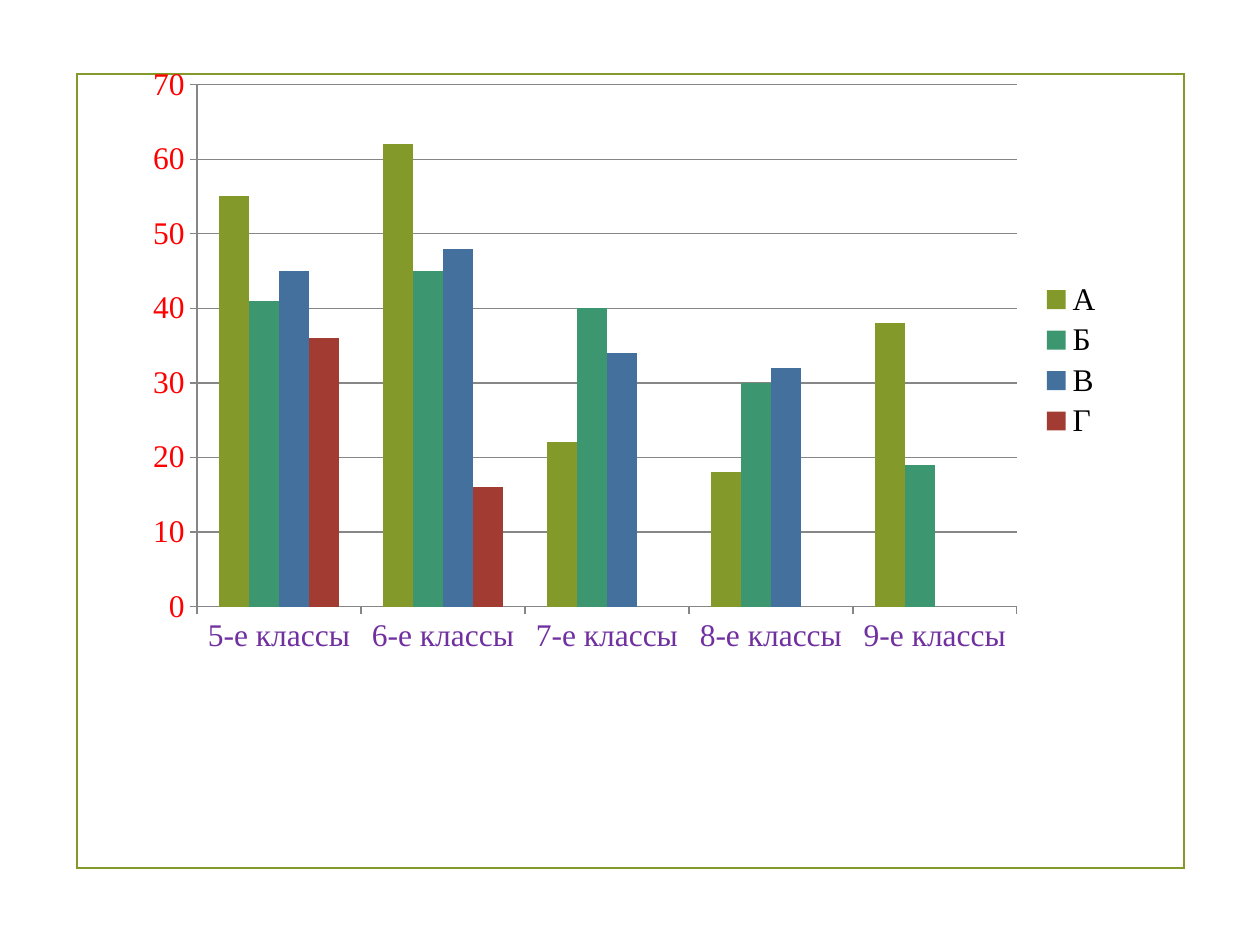
from dataclasses import dataclass

from lxml.etree import SubElement
from pptx import Presentation
from pptx.chart.data import CategoryChartData
from pptx.dml.color import RGBColor
from pptx.enum.chart import XL_CHART_TYPE as ChartType
from pptx.enum.chart import XL_LEGEND_POSITION as LegendPosition
from pptx.enum.chart import XL_TICK_MARK as TickMark
from pptx.enum.shapes import MSO_SHAPE as Shape
from pptx.oxml.ns import qn
from pptx.util import Inches, Pt

OLIVE = RGBColor(0x83, 0x99, 0x2A)
GREEN = RGBColor(0x3C, 0x97, 0x70)
BLUE = RGBColor(0x44, 0x70, 0x9D)
BRICK = RGBColor(0xA2, 0x3C, 0x33)
PURPLE = RGBColor(0x70, 0x30, 0xA0)
RED = RGBColor(0xFF, 0x00, 0x00)
BLACK = RGBColor(0x00, 0x00, 0x00)
GRAY = RGBColor(0x86, 0x86, 0x86)
FONT = "Times New Roman"


@dataclass(frozen=True)
class ClassLetter:
    name: str
    values: tuple
    color: RGBColor


GRADES = [f"{grade}-е классы" for grade in range(5, 10)]
LETTERS = [
    ClassLetter("А", (55, 62, 22, 18, 38), OLIVE),
    ClassLetter("Б", (41, 45, 40, 30, 19), GREEN),
    ClassLetter("В", (45, 48, 34, 32, None), BLUE),
    ClassLetter("Г", (36, 16, None, None, None), BRICK),
]


def format_text(text, *, color: RGBColor, size: float = 18) -> None:
    text.font.name = FONT
    text.font.size = Pt(size)
    text.font.color.rgb = color


def format_line(line, *, color: RGBColor, width: float) -> None:
    line.color.rgb = color
    line.width = Pt(width)


def format_axis(axis, *, color: RGBColor) -> None:
    axis.major_tick_mark = TickMark.OUTSIDE
    axis.minor_tick_mark = TickMark.NONE
    format_line(axis.format.line, color=GRAY, width=0.75)
    format_text(axis.tick_labels, color=color)


def draw_frame(page) -> None:
    frame = page.shapes.add_shape(
        Shape.RECTANGLE, Inches(0.61), Inches(0.59), Inches(8.79), Inches(6.3)
    )
    frame.shadow.inherit = False
    frame.fill.background()
    format_line(frame.line, color=OLIVE, width=1.25)
    outline = frame.element.spPr.find(qn("a:ln"))
    SubElement(outline, qn("a:miter"), lim="800000")


def draw_chart(page, letters: list[ClassLetter]) -> None:
    data = CategoryChartData()
    data.categories = GRADES
    for letter in letters:
        data.add_series(letter.name, letter.values)
    chart = page.shapes.add_chart(
        ChartType.COLUMN_CLUSTERED,
        Inches(1.06), Inches(0.44), Inches(7.8), Inches(4.84), data,
    ).chart
    chart.has_title = False
    format_text(chart, color=BLACK)

    plot = chart.plots[0]
    plot.gap_width = 150
    plot.overlap = 0
    plot.vary_by_categories = False
    for series, letter in zip(plot.series, letters):
        series.format.fill.solid()
        series.format.fill.fore_color.rgb = letter.color
        series.invert_if_negative = False

    format_axis(chart.category_axis, color=PURPLE)
    values = chart.value_axis
    format_axis(values, color=RED)
    values.minimum_scale, values.maximum_scale, values.major_unit = 0, 70, 10
    values.has_major_gridlines = True
    format_line(values.major_gridlines.format.line, color=GRAY, width=0.75)

    chart.has_legend = True
    chart.legend.position = LegendPosition.RIGHT
    chart.legend.include_in_layout = False
    format_text(chart.legend, color=BLACK)


def main() -> None:
    deck = Presentation()
    deck.slide_width, deck.slide_height = Inches(10), Inches(7.5)
    page = deck.slides.add_slide(deck.slide_layouts[6])
    draw_frame(page)
    draw_chart(page, LETTERS)
    deck.save("out.pptx")


if __name__ == "__main__":
    main()
